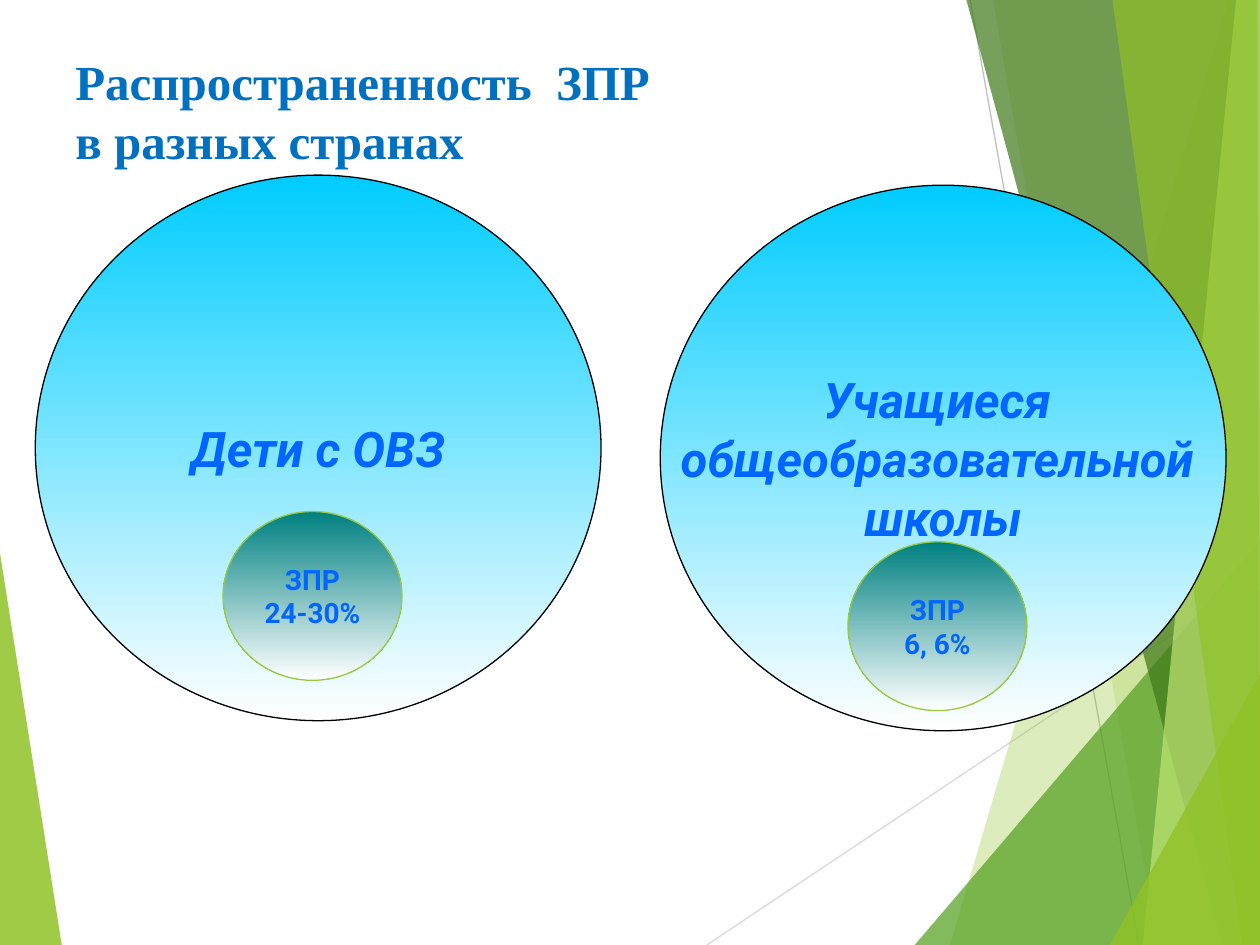
from lxml.etree import SubElement
from pptx import Presentation
from pptx.dml.color import RGBColor
from pptx.enum.shapes import MSO_CONNECTOR, MSO_SHAPE
from pptx.enum.text import MSO_ANCHOR, PP_ALIGN
from pptx.oxml.ns import qn
from pptx.util import Inches, Pt

WIDTH, HEIGHT = 10, 7.5

# Background facets: corner points, colour, opacity in percent
LEFT_FACET = ([(0, 4.39), (0.49, HEIGHT), (0, HEIGHT)], "90C226", 85)
RIGHT_FACETS = [
    ([(9.75, 0), (7.54, HEIGHT), (WIDTH, HEIGHT), (WIDTH, 0)], "90C226", 30),
    ([(7.88, 0), (9.19, HEIGHT), (WIDTH, HEIGHT), (WIDTH, 0)], "90C226", 20),
    ([(7.26, HEIGHT), (WIDTH, 4.29), (WIDTH, HEIGHT)], "54A021", 72),
    ([(7.67, 0), (9.7, HEIGHT), (WIDTH, HEIGHT), (WIDTH, 0)], "3F7819", 70),
    ([(9.81, 0), (9.07, HEIGHT), (WIDTH, HEIGHT), (WIDTH, 0)], "C0E474", 70),
    ([(8.83, 0), (9.86, HEIGHT), (WIDTH, HEIGHT), (9.98, 0)], "90C226", 65),
    ([(8.81, HEIGHT), (WIDTH, 5.35), (WIDTH, HEIGHT)], "90C226", 80),
]
RAYS = [((5.61, HEIGHT), (WIDTH, 4.57), "D9D9D9"),
        ((7.7, 0), (9.04, HEIGHT), "BFBFBF")]

# Each group of children: circle position and text, inner circle position and text
GROUPS = [
    ((0.28, 1.39), "Дети с ОВЗ", (1.77, 4.06), "ЗПР\n24-30%"),
    ((5.24, 1.47), "Учащиеся \nобщеобразовательной \nшколы",
     (6.73, 4.3), "ЗПР\n6, 6%"),
]


def color(hex_code):
    return RGBColor.from_string(hex_code)


def format_text(frame, font_name, size, hex_code, italic=False):
    for paragraph in frame.paragraphs:
        for run in paragraph.runs:
            font = run.font
            font.name, font.size = font_name, Pt(size)
            font.bold, font.italic = True, italic
            font.color.rgb = color(hex_code)


def add_facet(slide, corners, hex_code, opacity):
    points = [(Inches(x), Inches(y)) for x, y in corners]
    builder = slide.shapes.build_freeform(*points[0])
    builder.add_line_segments(points[1:], close=True)
    facet = builder.convert_to_shape()
    facet.shadow.inherit = False
    facet.line.fill.background()
    facet.fill.solid()
    facet.fill.fore_color.rgb = color(hex_code)
    fill_color = facet.fill._xPr.find(".//" + qn("a:srgbClr"))
    SubElement(fill_color, qn("a:alpha"), val=str(opacity * 1000))


def add_ray(slide, start, end, hex_code):
    ray = slide.shapes.add_connector(
        MSO_CONNECTOR.STRAIGHT, *(Inches(value) for value in start + end))
    ray.line.color.rgb = color(hex_code)
    ray.line.width = Pt(0.75)
    SubElement(ray._element.spPr, qn("a:effectLst"))


def add_title(slide, text):
    title = slide.shapes.add_textbox(
        Inches(0.5), Inches(0.3), Inches(8.99), Inches(1.72))
    frame = title.text_frame
    frame.word_wrap = True
    frame.margin_top = Inches(0.11)
    frame.text = text
    format_text(frame, "Times New Roman", 28, "0070C0")


def add_circle(slide, position, size, top_color, line_color, text, text_size,
               italic=False):
    circle = slide.shapes.add_shape(
        MSO_SHAPE.OVAL, *(Inches(value) for value in position + size))
    circle.shadow.inherit = False
    circle.line.color.rgb = color(line_color)
    circle.line.width = Pt(0.75)

    # Gradient running from the colour at the top down to white
    circle.fill.gradient()
    circle.fill.gradient_angle = 270
    for stop, hex_code in zip(circle.fill.gradient_stops, (top_color, "FFFFFF")):
        stop.color.rgb = color(hex_code)

    frame = circle.text_frame
    frame.word_wrap = False
    frame.vertical_anchor = MSO_ANCHOR.MIDDLE
    frame.text = text
    for paragraph in frame.paragraphs:
        paragraph.alignment = PP_ALIGN.CENTER
    format_text(frame, "Roboto", text_size, "0066FF", italic)


def main():
    presentation = Presentation()
    presentation.slide_width = Inches(WIDTH)
    presentation.slide_height = Inches(HEIGHT)
    slide = presentation.slides.add_slide(presentation.slide_layouts[6])

    # Background
    add_facet(slide, *LEFT_FACET)
    for ray in RAYS:
        add_ray(slide, *ray)
    for facet in RIGHT_FACETS:
        add_facet(slide, *facet)

    # Title and circles
    add_title(slide, "Распространенность  ЗПР \vв разных странах")
    for group_at, group_text, share_at, share_text in GROUPS:
        add_circle(slide, group_at, (4.49, 4.33), "00CCFF", "000000",
                   group_text, 28, italic=True)
        add_circle(slide, share_at, (1.42, 1.34), "008080", "99CA3C",
                   share_text, 16)

    presentation.save("out.pptx")


if __name__ == "__main__":
    main()
